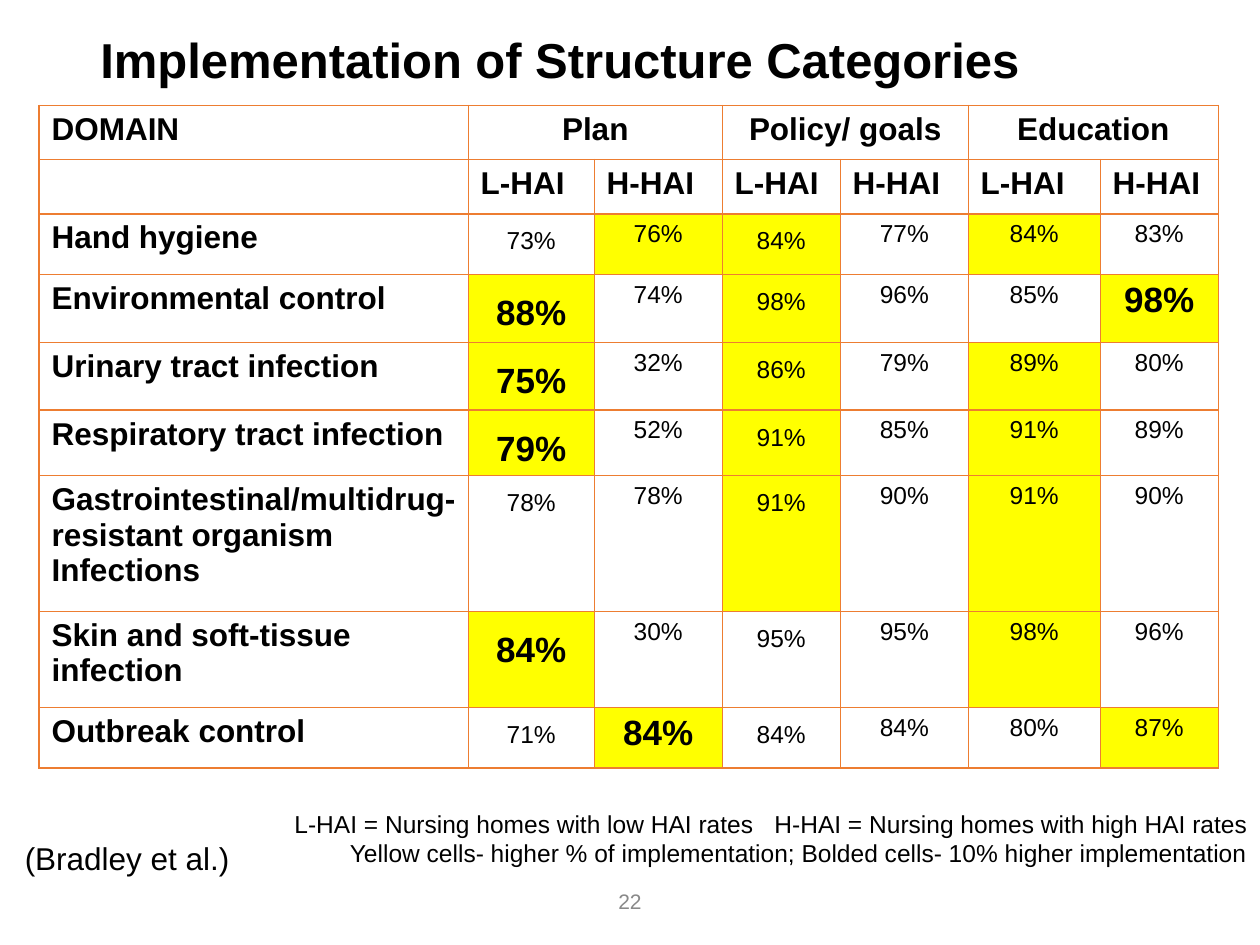
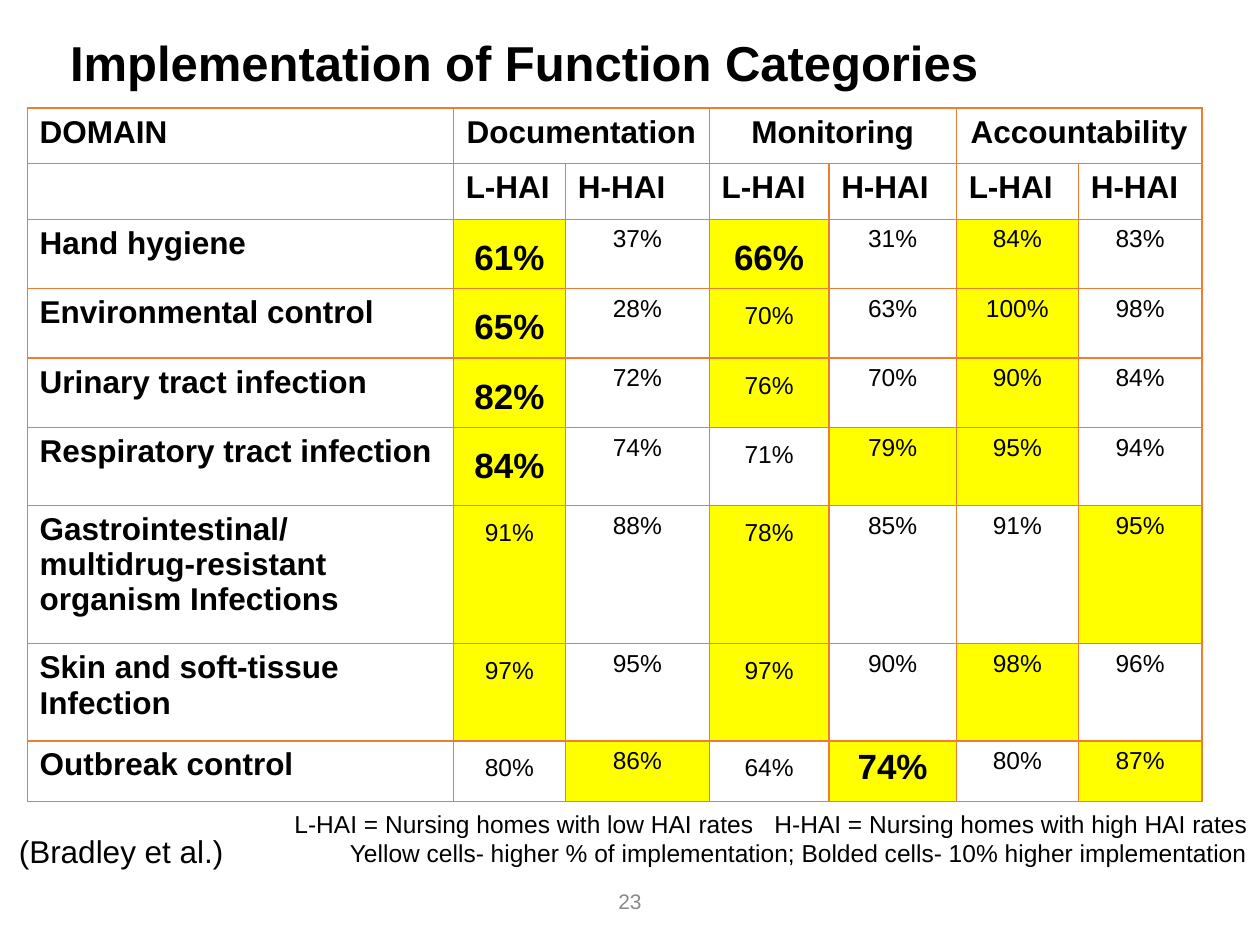
from dataclasses import dataclass

import pptx
import pptx.dml.color
import pptx.enum.text
import pptx.oxml
import pptx.oxml.ns
import pptx.util
from pptx.dml.color import RGBColor
from pptx.util import Cm, Pt

BLACK = RGBColor(0x00, 0x00, 0x00)
WHITE = RGBColor(0xFF, 0xFF, 0xFF)
YELLOW = RGBColor(0xFF, 0xFF, 0x00)
GREY = RGBColor(0x89, 0x89, 0x89)
ORANGE = RGBColor(0xED, 0x7D, 0x31)

FONT = "Arial"
LEFT = pptx.enum.text.PP_ALIGN.LEFT
CENTER = pptx.enum.text.PP_ALIGN.CENTER
RIGHT = pptx.enum.text.PP_ALIGN.RIGHT
MIDDLE = pptx.enum.text.MSO_ANCHOR.MIDDLE
TOP = pptx.enum.text.MSO_ANCHOR.TOP

TITLE_ONLY = 5
LOOSE_COLUMNS = (1, 3)  # value columns set with wide line spacing


@dataclass(frozen=True)
class Box:
    left: float
    top: float
    width: float
    height: float

    def lengths(self) -> tuple:
        return Cm(self.left), Cm(self.top), Cm(self.width), Cm(self.height)


@dataclass(frozen=True)
class DomainRow:
    """Percentages by column: * marks the higher rate, ! a rate 10% higher."""
    domain: str
    rates: str


@dataclass(frozen=True)
class RatesSlide:
    number: int
    title: str
    title_box: Box
    categories: tuple[str, ...]
    table_box: Box
    col_widths: tuple[float, ...]
    row_heights: tuple[float, ...]
    rows: tuple[DomainRow, ...]
    citation_box: Box


NUMBER_BOX = Box(8.41, 17.65, 8.58, 1.02)
LEGEND_BOX = Box(3.43, 16.18, 21.97, 1.45)

SLIDES = (
    RatesSlide(
        number=22,
        title="Implementation of Structure Categories",
        title_box=Box(1.77, 0.2, 23.0, 2.11),
        categories=("Plan", "Policy/ goals", "Education"),
        table_box=Box(0.79, 2.13, 23.77, 13.35),
        col_widths=(8.65, 2.54, 2.58, 2.38, 2.58, 2.66, 2.38),
        row_heights=(1.09, 1.09, 1.22, 1.37, 1.37, 1.32, 2.74, 1.93, 1.22),
        rows=(
            DomainRow("Hand hygiene", "73 76* 84* 77 84* 83"),
            DomainRow("Environmental control", "88! 74 98* 96 85 98!"),
            DomainRow("Urinary tract infection", "75! 32 86* 79 89* 80"),
            DomainRow("Respiratory tract infection", "79! 52 91* 85 91* 89"),
            DomainRow("Gastrointestinal/multidrug-resistant organism Infections",
                      "78 78 91* 90 91* 90"),
            DomainRow("Skin and soft-tissue infection", "84! 30 95 95 98* 96"),
            DomainRow("Outbreak control", "71 84! 84 84 80 87*"),
        ),
        citation_box=Box(0.25, 16.79, 4.85, 1.02),
    ),
    RatesSlide(
        number=23,
        title="Implementation of Function Categories",
        title_box=Box(1.16, 0.26, 23.6, 2.11),
        categories=("Documentation", "Monitoring", "Accountability"),
        table_box=Box(0.55, 2.18, 23.68, 13.98),
        col_widths=(8.59, 2.26, 2.9, 2.41, 2.57, 2.46, 2.49),
        row_heights=(1.12, 1.12, 1.4, 1.4, 1.4, 1.57, 2.79, 1.96, 1.22),
        rows=(
            DomainRow("Hand hygiene", "61! 37 66! 31 84* 83"),
            DomainRow("Environmental control", "65! 28 70* 63 100* 98"),
            DomainRow("Urinary tract infection", "82! 72 76* 70 90* 84"),
            DomainRow("Respiratory tract infection", "84! 74 71 79* 95* 94"),
            DomainRow("Gastrointestinal/multidrug-resistant organism Infections",
                      "91* 88 78* 85 91 95*"),
            DomainRow("Skin and soft-tissue Infection", "97* 95 97* 90 98* 96"),
            DomainRow("Outbreak control", "80 86* 64 74! 80 87*"),
        ),
        citation_box=Box(0.13, 16.64, 5.2, 1.02),
    ),
)


def add_text(p, text: str, *, size: float = 18, bold: bool = False,
             color: RGBColor = BLACK, align=LEFT, line: float = 1.0,
             after: float = 0, tracking: float = 0) -> None:
    p.alignment = align
    p.line_spacing = line
    p.space_before = Pt(0)
    p.space_after = Pt(after)
    r = p.add_run()
    r.text = text
    r.font.name = FONT
    r.font.size = Pt(size)
    r.font.bold = bold
    r.font.color.rgb = color
    if tracking:
        r._r.get_or_add_rPr().set("spc", str(round(tracking * 100)))


def add_box(s, box: Box, *, anchor=TOP, wrap: bool = True):
    tf = s.shapes.add_textbox(*box.lengths()).text_frame
    tf.word_wrap = wrap
    tf.vertical_anchor = anchor
    return tf


def set_borders(cell) -> None:
    tc_pr = cell._tc.get_or_add_tcPr()
    for i, edge in enumerate(("lnL", "lnR", "lnT", "lnB")):
        tc_pr.insert(i, pptx.oxml.parse_xml(
            f'<a:{edge} {pptx.oxml.ns.nsdecls("a")} w="{Pt(1)}">'
            f'<a:solidFill><a:srgbClr val="{ORANGE}"/></a:solidFill></a:{edge}>'))


def fill_rate(cell, mark: str, loose: bool) -> None:
    """Write one percentage and style it by its mark."""
    strong = mark.endswith("!")
    if mark[-1] in "*!":
        cell.fill.fore_color.rgb = YELLOW
    if loose:
        cell.margin_left = cell.margin_right = Cm(0.18)
        cell.margin_top = cell.margin_bottom = 0
    add_text(cell.text_frame.paragraphs[0], mark.rstrip("*!") + "%",
             size=20 if strong else 14, bold=strong, align=CENTER,
             line=1.5 if loose else 1.0, after=2 if loose else 0)


def add_rates_table(s, spec_: RatesSlide) -> None:
    table = s.shapes.add_table(len(spec_.row_heights), len(spec_.col_widths),
                               *spec_.table_box.lengths()).table
    table.first_row = table.horz_banding = False
    for col, width in zip(table.columns, spec_.col_widths):
        col.width = Cm(width)
    for row, height in zip(table.rows, spec_.row_heights):
        row.height = Cm(height)
    for cell in table.iter_cells():
        cell.fill.solid()
        cell.fill.fore_color.rgb = WHITE
        cell.margin_left = cell.margin_right = Cm(0.25)
        cell.margin_top = cell.margin_bottom = Cm(0.13)
        set_borders(cell)

    def label(row: int, col: int, text: str, align=LEFT) -> None:
        add_text(table.cell(row, col).text_frame.paragraphs[0], text,
                 bold=True, align=align)

    label(0, 0, "DOMAIN")
    for i, category in enumerate(spec_.categories):
        col = 1 + 2 * i
        table.cell(0, col).merge(table.cell(0, col + 1))
        label(0, col, category, CENTER)
        label(1, col, "L-HAI")
        label(1, col + 1, "H-HAI")
    for row, entry in enumerate(spec_.rows, start=2):
        label(row, 0, entry.domain)
        for col, mark in enumerate(entry.rates.split(), start=1):
            fill_rate(table.cell(row, col), mark, col in LOOSE_COLUMNS)


def add_title(s, text: str, box: Box) -> None:
    sp = s.shapes.title
    sp.left, sp.top, sp.width, sp.height = box.lengths()
    tf = sp.text_frame
    tf.vertical_anchor = MIDDLE
    tf.auto_size = pptx.enum.text.MSO_AUTO_SIZE.NONE
    add_text(tf.paragraphs[0], text, size=28, bold=True, line=0.9)


def add_legend(s) -> None:
    tf = add_box(s, LEGEND_BOX)
    p = tf.paragraphs[0]
    add_text(p, "L-HAI = Nursing homes with low HAI rates", size=14, align=RIGHT)
    add_text(p, " ", size=14, align=RIGHT, tracking=7.8)
    add_text(p, "H-HAI = Nursing homes with high HAI rates", size=14, align=RIGHT)
    add_text(tf.add_paragraph(),
             "Yellow cells- higher % of implementation; "
             "Bolded cells- 10% higher implementation", size=14, align=RIGHT)


def add_rates_slide(prs, content: RatesSlide) -> None:
    s = prs.slides.add_slide(prs.slide_layouts[TITLE_ONLY])
    add_title(s, content.title, content.title_box)
    add_rates_table(s, content)
    add_text(add_box(s, content.citation_box, wrap=False).paragraphs[0],
             "(Bradley et al.)")
    add_text(add_box(s, NUMBER_BOX, anchor=MIDDLE).paragraphs[0],
             str(content.number), size=12, color=GREY, align=CENTER)
    add_legend(s)


def main() -> None:
    prs = pptx.Presentation()
    prs.slide_width, prs.slide_height = Cm(25.4), Cm(19.05)
    for content in SLIDES:
        add_rates_slide(prs, content)
    prs.save("out.pptx")


if __name__ == "__main__":
    main()
